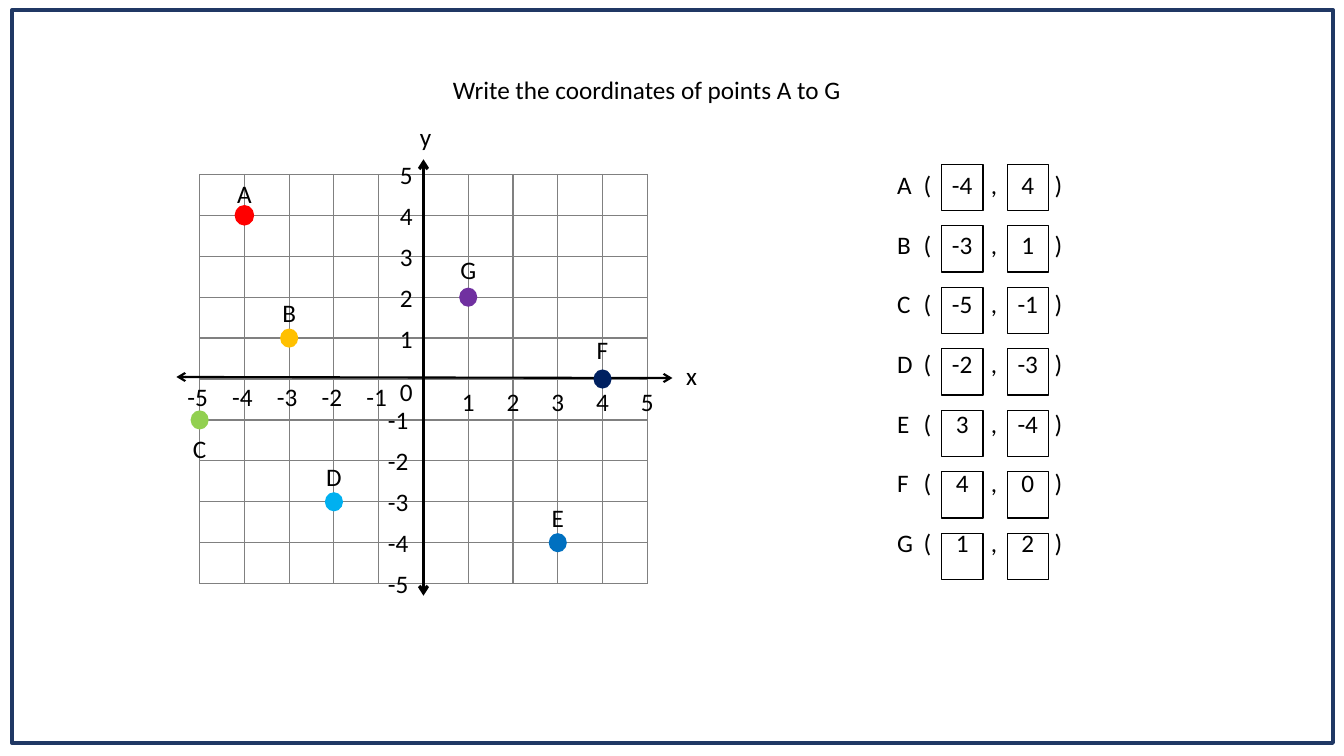
from lxml import etree
from pptx import Presentation
from pptx.dml.color import RGBColor
from pptx.enum.shapes import MSO_CONNECTOR, MSO_SHAPE
from pptx.enum.text import MSO_ANCHOR, PP_ALIGN
from pptx.oxml.ns import qn
from pptx.util import Inches, Pt

STRAIGHT = MSO_CONNECTOR.STRAIGHT
OVAL, RECTANGLE = MSO_SHAPE.OVAL, MSO_SHAPE.RECTANGLE
CENTER, LEFT, MIDDLE = PP_ALIGN.CENTER, PP_ALIGN.LEFT, MSO_ANCHOR.MIDDLE

# Content
TITLE = "Write the coordinates of points A to G"
POINTS = [  # letter, x, y, colour, label offset below the point
    ("A", -4, 4, "red", -0.22),
    ("B", -3, 1, "amber", -0.25),
    ("C", -5, -1, "green", 0.28),
    ("D", -2, -3, "sky", -0.25),
    ("E", 3, -4, "blue", -0.25),
    ("F", 4, 0, "navy", -0.29),
    ("G", 1, 2, "purple", -0.27),
]
OUTLINED = {"A"}
COLOURS = {
    "ink": "000000", "grid": "808080", "frame": "203864",
    "red": "FF0000", "amber": "FFC000", "green": "92D050", "sky": "00B0F0",
    "blue": "0070C0", "navy": "002060", "purple": "7030A0",
}
FONT, SIZE = "Calibri", 18

# Layout in inches
WIDTH, HEIGHT = 13.33, 7.5
REACH = 5                              # units on each half axis
ORIGIN_X, ORIGIN_Y = 4.2, 3.76
HALF_W, HALF_H = 2.22, 2.03
UNIT_X, UNIT_Y = HALF_W / REACH, HALF_H / REACH
DOT_W, DOT_H = 0.18, 0.19
ANSWER_LEFT, ANSWER_TOP, ANSWER_PITCH = 8.8, 1.63, 0.61
INSET = 0.1
BOX_LEFTS, BOX_W, BOX_H = (9.34, 9.99), 0.41, 0.46
BRACKET_X, COMMA_X, CLOSE_X = 9.2, 9.86, 10.5

prs = Presentation()
prs.slide_width, prs.slide_height = Inches(WIDTH), Inches(HEIGHT)
slide = prs.slides.add_slide(prs.slide_layouts[5])
shapes = slide.shapes


def rgb(name):
    return RGBColor.from_string(COLOURS[name])


def style(paragraph, align=CENTER):
    paragraph.alignment = align
    for run in paragraph.runs:
        run.font.name, run.font.size = FONT, Pt(SIZE)
        run.font.color.rgb = rgb("ink")


def add_label(text, center_x, center_y, width=0.5, height=0.4):
    label = shapes.add_textbox(Inches(center_x - width / 2), Inches(center_y - height / 2),
                               Inches(width), Inches(height))
    label.text_frame.word_wrap = True
    label.text_frame.text = text
    style(label.text_frame.paragraphs[0])


def add_figure(kind, left, top, width, height, fill=None, line=None, weight=1):
    figure = shapes.add_shape(kind, Inches(left), Inches(top), Inches(width), Inches(height))
    figure.shadow.inherit = False
    if fill:
        figure.fill.solid()
        figure.fill.fore_color.rgb = rgb(fill)
    else:
        figure.fill.background()
    if line:
        figure.line.color.rgb, figure.line.width = rgb(line), Pt(weight)
    else:
        figure.line.fill.background()


def add_quadrant(left, top):
    table = shapes.add_table(REACH, REACH, Inches(left), Inches(top),
                             Inches(HALF_W), Inches(HALF_H)).table
    table.first_row = table.horz_banding = False
    for cell in table.iter_cells():
        cell.margin_top = cell.margin_bottom = 0
        properties = cell._tc.get_or_add_tcPr()
        for side in ("a:lnL", "a:lnR", "a:lnT", "a:lnB"):
            border = etree.SubElement(properties, qn(side), w=str(Pt(1)))
            solid = etree.SubElement(border, qn("a:solidFill"))
            etree.SubElement(solid, qn("a:srgbClr"), val=COLOURS["grid"])
        cell.fill.background()


def add_axis(x1, y1, x2, y2, weight):
    axis = shapes.add_connector(STRAIGHT, Inches(x1), Inches(y1), Inches(x2), Inches(y2))
    axis.line.color.rgb, axis.line.width = rgb("ink"), Pt(weight)
    for end in ("a:headEnd", "a:tailEnd"):
        etree.SubElement(axis.line._get_or_add_ln(), qn(end), type="arrow")
    etree.SubElement(axis._element.spPr, qn("a:effectLst"))


# Title
title = shapes.title
title.left, title.top, title.width, title.height = map(Inches, (4.37, 0.69, 4.09, 0.4))
title.text_frame.text = TITLE
title.text_frame.word_wrap = False
title.text_frame.vertical_anchor = MIDDLE
style(title.text_frame.paragraphs[0])

# Four quadrants and the axes
for quadrant_top in (ORIGIN_Y - HALF_H, ORIGIN_Y):
    for quadrant_left in (ORIGIN_X, ORIGIN_X - HALF_W):
        add_quadrant(quadrant_left, quadrant_top)
add_axis(ORIGIN_X, 1.58, ORIGIN_X, 5.91, 2.25)
add_axis(6.67, 3.75, 1.75, 3.74, 1.5)

# Axis numbers and names
add_label("0", 4.03, 3.88)
for number in range(1, REACH + 1):
    step_x, step_y = number * UNIT_X, number * UNIT_Y
    add_label(str(number), ORIGIN_X + step_x, 3.98)
    add_label(str(-number), ORIGIN_X - step_x - 0.02, 3.93)
    add_label(str(number), 4.03, ORIGIN_Y - step_y)
    add_label(str(-number), 3.95, ORIGIN_Y + step_y)
add_label("x", 6.86, 3.73)
add_label("y", 4.22, 1.35)

# Slide frame
add_figure(RECTANGLE, 0.12, 0.1, 13.1, 7.27, line="frame", weight=3)

# Points
for letter, x, y, colour, label_offset in POINTS:
    point_x, point_y = ORIGIN_X + x * UNIT_X, ORIGIN_Y - y * UNIT_Y
    add_figure(OVAL, point_x - DOT_W / 2, point_y - DOT_H / 2, DOT_W, DOT_H,
               fill=colour, line=colour if letter in OUTLINED else None)
    add_label(letter, point_x, point_y + label_offset)

# Answers, lined up on centred tabs
answers = shapes.add_textbox(Inches(ANSWER_LEFT), Inches(ANSWER_TOP), Inches(1.95), Inches(4.04))
answers.text_frame.word_wrap = True
answers.text_frame.text = "\n".join(
    f"{letter}\t(\t{x}\t,\t{y}\t)" for letter, x, y, *_ in POINTS)
x_center, y_center = (left + BOX_W / 2 for left in BOX_LEFTS)
for row, answer in enumerate(answers.text_frame.paragraphs):
    tabs = etree.SubElement(answer._p.get_or_add_pPr(), qn("a:tabLst"))
    for stop in (BRACKET_X, x_center, COMMA_X, y_center, CLOSE_X):
        etree.SubElement(tabs, qn("a:tab"), algn="ctr",
                         pos=str(Inches(stop - ANSWER_LEFT - INSET)))
    style(answer, LEFT)
    if row:
        answer.space_before = Pt(21)
    for box_left in BOX_LEFTS:
        add_figure(RECTANGLE, box_left, ANSWER_TOP + row * ANSWER_PITCH, BOX_W, BOX_H, line="ink")

prs.save("out.pptx")
